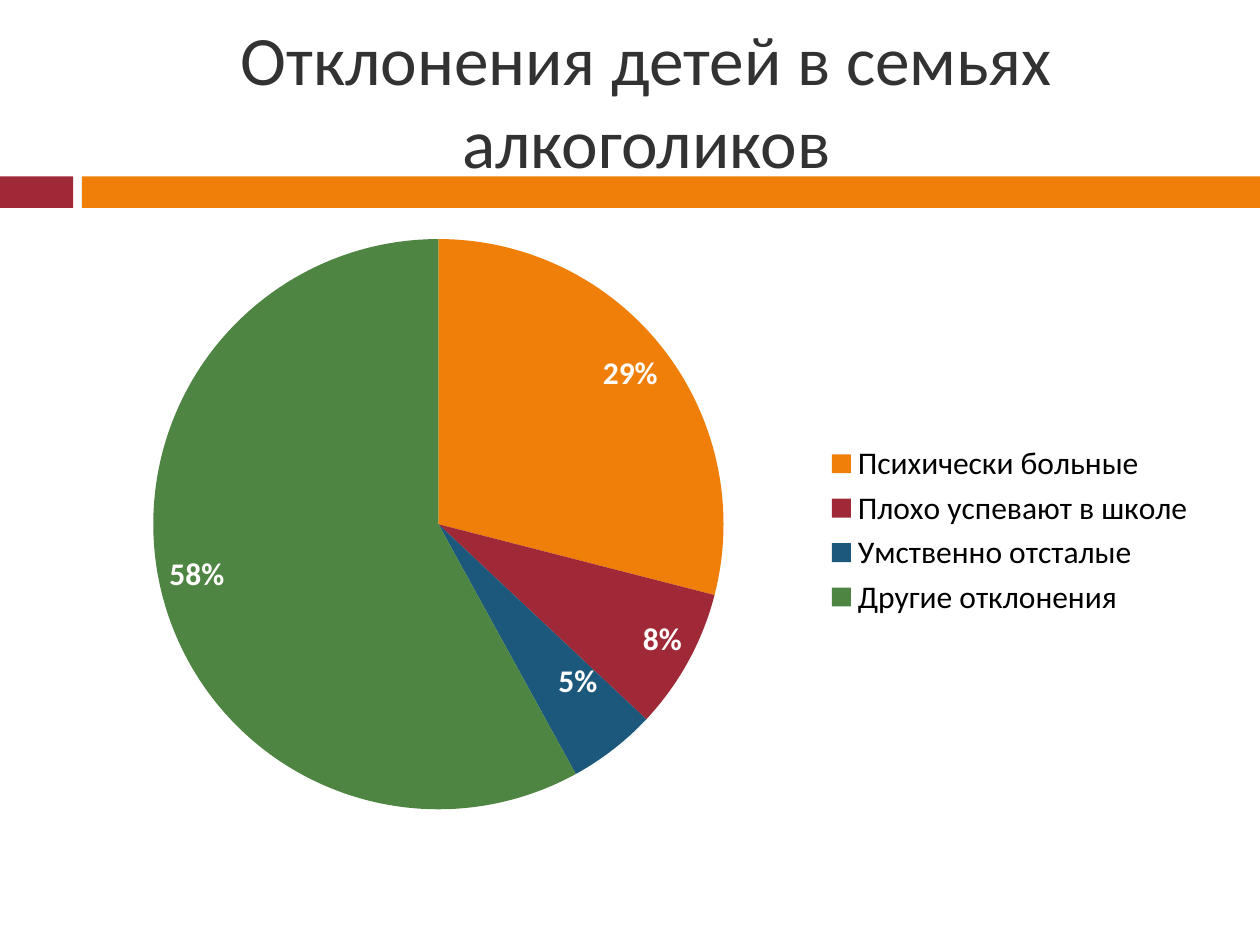
from lxml.etree import SubElement
from pptx import Presentation
from pptx.chart.data import CategoryChartData
from pptx.dml.color import RGBColor
from pptx.enum.chart import XL_CHART_TYPE, XL_LABEL_POSITION, XL_LEGEND_POSITION
from pptx.enum.shapes import MSO_SHAPE
from pptx.enum.text import MSO_ANCHOR, PP_ALIGN
from pptx.oxml.ns import qn
from pptx.util import Inches, Pt

FONT = "Calibri"
ORANGE = RGBColor(0xF0, 0x7F, 0x09)
RED = RGBColor(0x9F, 0x29, 0x36)
BLUE = RGBColor(0x1B, 0x58, 0x7C)
GREEN = RGBColor(0x4E, 0x85, 0x42)
DARK = RGBColor(0x32, 0x32, 0x32)
BLACK = RGBColor(0, 0, 0)
LABEL = RGBColor(0xFF, 0xFC, 0xFC)

DEVIATIONS = [
    ("Психически больные", 0.29, ORANGE),
    ("Плохо успевают в школе", 0.08, RED),
    ("Умственно отсталые", 0.05, BLUE),
    ("Другие отклонения", 0.58, GREEN),
]
SHIFTED = 2  # slice whose label sits closer to the centre


def style_font(font, size, color, bold=False):
    font.name = FONT
    font.size = Pt(size)
    font.color.rgb = color
    font.bold = bold


def set_title(slide, text):
    sp = slide.shapes.title
    sp.left, sp.top = Inches(0.67), Inches(0.25)
    sp.width, sp.height = Inches(8.92), Inches(1.08)
    tf = sp.text_frame
    tf.text = text
    tf.word_wrap = True
    tf.vertical_anchor = MSO_ANCHOR.MIDDLE
    p = tf.paragraphs[0]
    p.alignment = PP_ALIGN.CENTER
    style_font(p.runs[0].font, 39.6, DARK)


def add_bar(slide, left, width, color):
    sp = slide.shapes.add_shape(
        MSO_SHAPE.RECTANGLE, Inches(left), Inches(1.4), Inches(width), Inches(0.25))
    sp.shadow.inherit = False
    sp.fill.solid()
    sp.fill.fore_color.rgb = color
    sp.line.fill.background()


def add_manual_layout(layout, **settings):
    manual = SubElement(layout, qn("c:manualLayout"))
    for name, value in settings.items():
        SubElement(manual, qn(f"c:{name}")).set("val", str(value))


def fix_plot_area(chart):
    """Give the pie a fixed place, as fractions of the chart frame."""
    area = chart.plots[0]._element.getparent()
    for old in area.findall(qn("c:layout")):
        area.remove(old)
    layout = SubElement(area, qn("c:layout"))
    area.insert(0, layout)
    add_manual_layout(layout, layoutTarget="inner", xMode="edge", yMode="edge",
                      x=0.06, y=0.03, w=0.51, h=0.92)


def format_labels(series):
    labels = series.data_labels
    labels.show_value = True
    labels.show_percentage = False
    labels.number_format = "0%"
    labels.number_format_is_linked = False
    labels.position = XL_LABEL_POSITION.INSIDE_END
    style_font(labels.font, 18, LABEL, bold=True)

    label = series.points[SHIFTED].data_label
    style_font(label.font, 18, LABEL, bold=True)
    label.position = XL_LABEL_POSITION.INSIDE_END
    element = labels._element.find(qn("c:dLbl"))
    layout = SubElement(element, qn("c:layout"))
    number_format = SubElement(element, qn("c:numFmt"), formatCode="0%", sourceLinked="0")
    element.insert(1, layout)
    element.insert(2, number_format)
    add_manual_layout(layout, x=-0.01, y=-0.07)


def add_pie(slide):
    names, values, colors = zip(*DEVIATIONS)
    data = CategoryChartData(number_format="0%")
    data.categories = names
    data.add_series("Series 1", values)
    chart = slide.shapes.add_chart(
        XL_CHART_TYPE.PIE, Inches(0.67), Inches(1.75), Inches(8.92), Inches(4.92), data).chart
    style_font(chart.font, 18, BLACK)
    chart.has_title = False
    chart.has_legend = True
    chart.legend.position = XL_LEGEND_POSITION.RIGHT
    chart.legend.include_in_layout = False
    plot = chart.plots[0]
    plot.vary_by_categories = True
    series = plot.series[0]
    for i, color in enumerate(colors):
        fill = series.points[i].format.fill
        fill.solid()
        fill.fore_color.rgb = color
    format_labels(series)
    fix_plot_area(chart)


def main():
    prs = Presentation()
    prs.slide_width, prs.slide_height = Inches(10), Inches(7.5)
    slide = prs.slides.add_slide(prs.slide_layouts[5])
    set_title(slide, "Отклонения детей в семьях алкоголиков")
    add_bar(slide, 0, 0.58, RED)
    add_bar(slide, 0.65, 9.35, ORANGE)
    add_pie(slide)
    prs.save("out.pptx")


if __name__ == "__main__":
    main()
